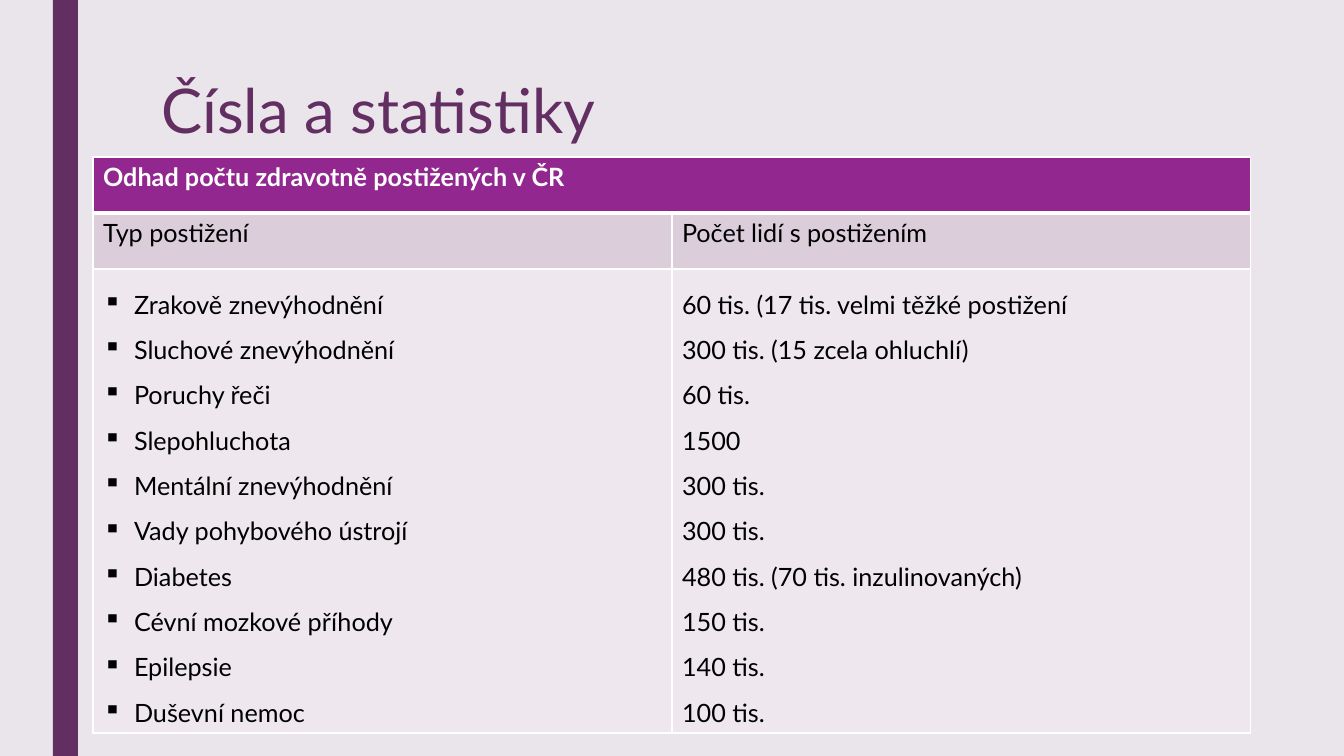
from lxml import etree
from pptx import Presentation
from pptx.dml.color import RGBColor
from pptx.enum.shapes import MSO_SHAPE
from pptx.enum.text import MSO_ANCHOR, PP_ALIGN
from pptx.oxml.ns import qn
from pptx.util import Pt

RECT = MSO_SHAPE.RECTANGLE
TOP = MSO_ANCHOR.TOP
LEFT = PP_ALIGN.LEFT

SLIDE_W, SLIDE_H = 1344, 756
EMU_PER_PX = 12192000 / SLIDE_W

FONT = "Lato"
BACKGROUND = RGBColor(0xEA, 0xE5, 0xEB)
PLUM = RGBColor(0x63, 0x2E, 0x62)
HEADER_FILL = RGBColor(0x92, 0x27, 0x8F)
SUBHEADER_FILL = RGBColor(0xDC, 0xCD, 0xDB)
BODY_FILL = RGBColor(0xEE, 0xE8, 0xEE)
WHITE = RGBColor(0xFF, 0xFF, 0xFF)
BLACK = RGBColor(0x00, 0x00, 0x00)

ROW_HEIGHTS = (56, 56, 464)
BULLET_INDENT = 31
TITLE = "Čísla a statistiky"
TABLE_HEADING = "Odhad počtu zdravotně postižených v ČR"
COLUMN_HEADINGS = ("Typ postižení", "Počet lidí s postižením")
ESTIMATES = (
    ("Zrakově znevýhodnění", "60 tis. (17 tis. velmi těžké postižení"),
    ("Sluchové znevýhodnění", "300 tis. (15 zcela ohluchlí)"),
    ("Poruchy řeči", "60 tis."),
    ("Slepohluchota", "1500"),
    ("Mentální znevýhodnění", "300 tis."),
    ("Vady pohybového ústrojí", "300 tis."),
    ("Diabetes", "480 tis. (70 tis. inzulinovaných)"),
    ("Cévní mozkové příhody", "150 tis."),
    ("Epilepsie", "140 tis."),
    ("Duševní nemoc", "100 tis."),
)


def px(n):
    return round(n * EMU_PER_PX)


def add_run(p, text, size, color, bold=False):
    r = p.add_run()
    r.text = text
    r.font.name = FONT
    r.font.size = Pt(size)
    r.font.bold = bold
    r.font.color.rgb = color


def add_side_bar(slide, x, y, w, h):
    s = slide.shapes.add_shape(RECT, px(x), px(y), px(w), px(h))
    s.shadow.inherit = False
    s.fill.solid()
    s.fill.fore_color.rgb = PLUM
    s.line.fill.background()


def set_title(slide, x, y, w, h):
    s = slide.shapes.title
    s.left, s.top, s.width, s.height = px(x), px(y), px(w), px(h)
    tf = s.text_frame
    tf.word_wrap = True
    tf.vertical_anchor = TOP
    p = tf.paragraphs[0]
    p.alignment = LEFT
    p.line_spacing = 0.89
    add_run(p, TITLE, 44, PLUM)


def set_borders(cell, top=1, bottom=1):
    """Draw white cell borders; widths are in points."""
    tcPr = cell._tc.get_or_add_tcPr()
    for tag, width in (("lnL", 1), ("lnR", 1), ("lnT", top), ("lnB", bottom)):
        ln = etree.SubElement(tcPr, qn("a:" + tag), w=str(Pt(width)))
        fill = etree.SubElement(ln, qn("a:solidFill"))
        etree.SubElement(fill, qn("a:srgbClr"), val=str(WHITE))


def add_bullet(p):
    pPr = p._p.get_or_add_pPr()
    pPr.set("marL", str(px(BULLET_INDENT)))
    pPr.set("indent", str(-px(BULLET_INDENT)))
    etree.SubElement(pPr, qn("a:buChar"), char="▪")


def fill_cell(cell, lines, fill, color=BLACK, bold=False, spacing=None, bulleted=False):
    cell.fill.solid()
    cell.fill.fore_color.rgb = fill
    tf = cell.text_frame
    for i, line in enumerate(lines):
        p = tf.add_paragraph() if i else tf.paragraphs[0]
        if spacing:
            p.line_spacing = spacing
        if bulleted:
            add_bullet(p)
        add_run(p, line, 18, color, bold)


def add_estimate_table(slide, x, y, w):
    frame = slide.shapes.add_table(3, 2, px(x), px(y), px(w), px(sum(ROW_HEIGHTS)))
    table = frame.table
    table.horz_banding = False
    for row, height in zip(table.rows, ROW_HEIGHTS):
        row.height = px(height)
    for col in range(2):
        table.columns[col].width = px(w / 2)
        set_borders(table.cell(0, col), bottom=3)
        set_borders(table.cell(1, col), top=3)
        set_borders(table.cell(2, col))
        fill_cell(table.cell(1, col), [COLUMN_HEADINGS[col]], SUBHEADER_FILL)
        fill_cell(table.cell(2, col), [entry[col] for entry in ESTIMATES],
                  BODY_FILL, spacing=1.5, bulleted=col == 0)
    heading = table.cell(0, 0)
    heading.merge(table.cell(0, 1))
    fill_cell(heading, [TABLE_HEADING], HEADER_FILL, WHITE, bold=True)


def main():
    prs = Presentation()
    prs.slide_width, prs.slide_height = px(SLIDE_W), px(SLIDE_H)
    slide = prs.slides.add_slide(prs.slide_layouts.get_by_name("Title Only"))
    slide.background.fill.solid()
    slide.background.fill.fore_color.rgb = BACKGROUND
    add_side_bar(slide, 53, 0, 25, SLIDE_H)
    set_title(slide, 151, 76, 1058, 163)
    add_estimate_table(slide, 93, 157, 1158)
    prs.save("out.pptx")


if __name__ == "__main__":
    main()
